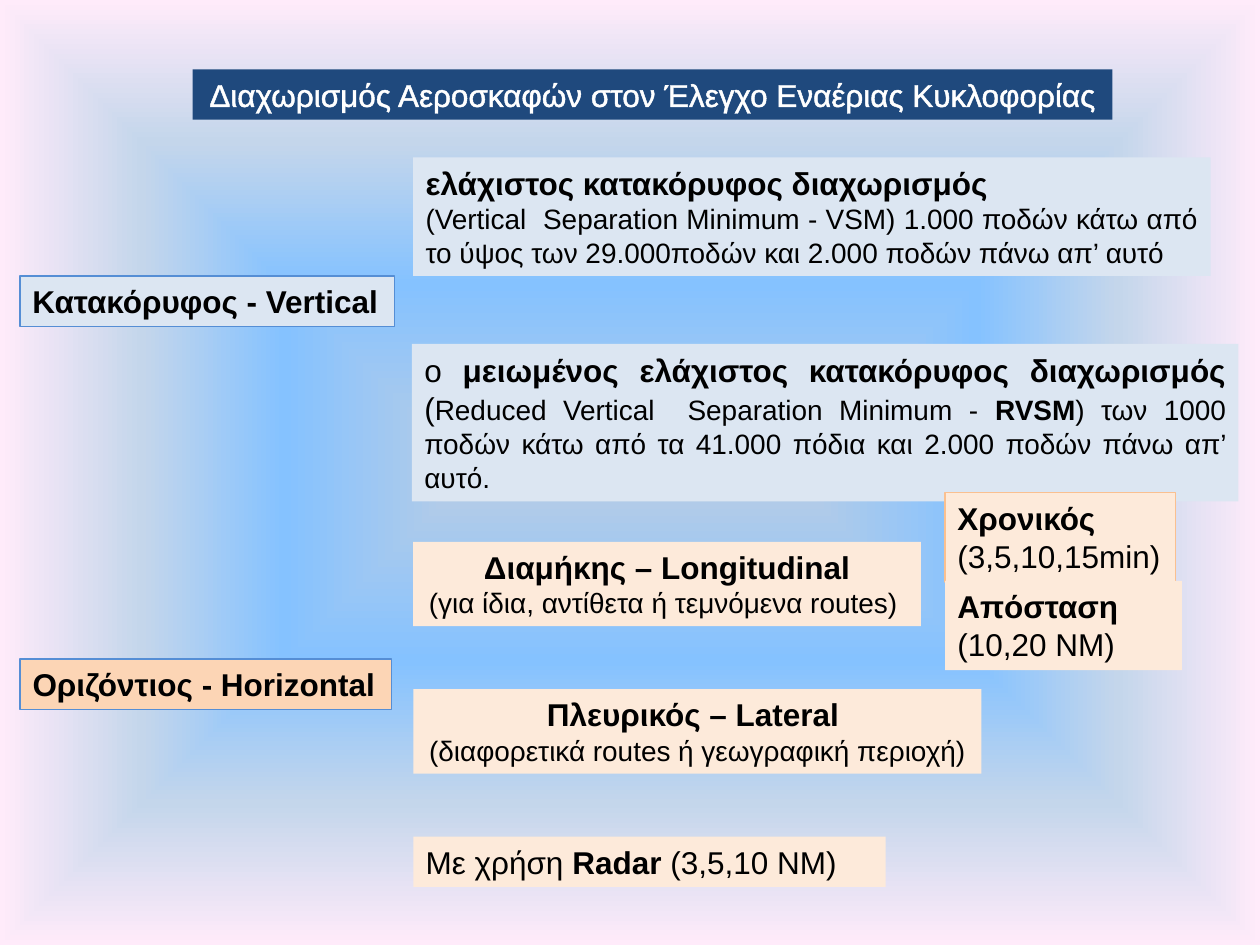
import pptx
import pptx.util
import pptx.dml.color
import pptx.enum.shapes
import pptx.enum.text
import pptx.oxml
import pptx.oxml.ns

Pt = pptx.util.Pt
RGB = pptx.dml.color.RGBColor.from_string
ALIGN = pptx.enum.text.PP_ALIGN
ANCHOR = pptx.enum.text.MSO_ANCHOR
A_NS = pptx.oxml.ns.nsdecls("a")

COLORS = {
    "title": "1F497D", "white": "FFFFFF", "black": "000000",
    "vertical": "DCE6F2", "horizontal": "FCD5B5", "method": "FDEADA",
    "blue line": "558ED5", "orange line": "FAC090",
}
BACKGROUND_STOPS = [(0, "B9CDE5"), (40, "85C2FF"), (70, "C4D6EB"), (100, "FFEBFA")]
BIG, SMALL = 18, 16
METHOD_LEFT = 236.16
TIME_LEFT = 540

presentation = pptx.Presentation()
presentation.slide_width, presentation.slide_height = Pt(720), Pt(540)
slide = presentation.slides.add_slide(presentation.slide_layouts[6])


def add_box(box, fill, paragraphs, align=ALIGN.LEFT, line=None, wrap=True,
            anchor=ANCHOR.TOP, color="black"):
    """Add a filled box; each paragraph is a list of (text, size, bold) runs."""
    shape = slide.shapes.add_shape(
        pptx.enum.shapes.MSO_SHAPE.RECTANGLE, *[Pt(length) for length in box])
    shape.shadow.inherit = False
    shape.fill.solid()
    shape.fill.fore_color.rgb = RGB(COLORS[fill])
    if line:
        shape.line.color.rgb = RGB(COLORS[line])
        shape.line.width = Pt(0.75)
    else:
        shape.line.fill.background()

    frame = shape.text_frame
    frame.word_wrap = wrap
    frame.auto_size = pptx.enum.text.MSO_AUTO_SIZE.SHAPE_TO_FIT_TEXT
    frame.vertical_anchor = anchor
    for index, runs in enumerate(paragraphs):
        paragraph = frame.add_paragraph() if index else frame.paragraphs[0]
        paragraph.alignment = align
        _, base_size, base_bold = runs[0]
        font = paragraph.font
        font.name, font.size, font.bold = "Arial", Pt(base_size), base_bold
        font.color.rgb = RGB(COLORS[color])
        for text, size, bold in runs:
            run = paragraph.add_run()
            run.text = text
            if size != base_size:
                run.font.size = Pt(size)
            if bold != base_bold:
                run.font.bold = bold
    return shape


# Background: gradient from the centre to the edges
slide.background.fill.gradient()
gradient = slide.element.find(".//" + pptx.oxml.ns.qn("a:gradFill"))
for child in list(gradient):
    gradient.remove(child)
stops = "".join(f'<a:gs pos="{position * 1000}"><a:srgbClr val="{color}"/></a:gs>'
                for position, color in BACKGROUND_STOPS)
for xml in (
    f"<a:gsLst {A_NS}>{stops}</a:gsLst>",
    f'<a:path {A_NS} path="shape">'
    '<a:fillToRect l="50000" t="50000" r="50000" b="50000"/></a:path>',
):
    gradient.append(pptx.oxml.parse_xml(xml))

# Title with outlined letters
title = add_box(
    (110.16, 39.6, 525.6, 28.8), "title",
    [[("Διαχωρισμός Αεροσκαφών στον Έλεγχο Εναέριας Κυκλοφορίας", BIG, False)]],
    align=ALIGN.CENTER, color="white")
title_run = title.text_frame.paragraphs[0].runs[0]
title_run.font.color.rgb = RGB(COLORS["white"])
title_run.font.fill.solid()
title_run.font.color.rgb = RGB(COLORS["white"])
title_run.font._element.insert(0, pptx.oxml.parse_xml(
    f'<a:ln {A_NS} w="{Pt(1.45)}"><a:solidFill>'
    f'<a:srgbClr val="{COLORS["white"]}"/></a:solidFill></a:ln>'))

# The two kinds of separation
for top, width, fill, text in [
    (157.68, 213.84, "vertical", "Κατακόρυφος - Vertical"),
    (376.56, 212.4, "horizontal", "Οριζόντιος - Horizontal"),
]:
    add_box((11.52, top, width, 28.8), fill, [[(text, BIG, True)]],
            line="blue line", wrap=False)

# Vertical minima
add_box((METHOD_LEFT, 90, 455.76, 67.68), "vertical", [
    [("ελάχιστος κατακόρυφος διαχωρισμός ", BIG, True)],
    [("(Vertical  Separation Minimum - VSM) 1.000 ποδών κάτω από το ύψος των "
      "29.000ποδών και 2.000 ποδών πάνω απ’ αυτό", SMALL, False)],
], align=ALIGN.JUSTIFY)
add_box((235.44, 196.56, 472.32, 90), "vertical", [[
    ("ο ", BIG, False),
    ("μειωμένος ελάχιστος κατακόρυφος διαχωρισμός", BIG, True),
    (" (", BIG, False),
    ("Reduced Vertical  Separation Minimum - ", SMALL, False),
    ("RVSM", SMALL, True),
    (") των 1000 ποδών κάτω από τα 41.000 πόδια και 2.000 ποδών πάνω απ’ αυτό.",
     SMALL, False),
]], align=ALIGN.JUSTIFY, anchor=ANCHOR.MIDDLE)

# Horizontal methods
for top, width, heading, detail in [
    (393.84, 324.72, "Πλευρικός – Lateral ",
     "(διαφορετικά routes ή γεωγραφική περιοχή)"),
    (309.6, 290.16, "Διαμήκης – Longitudinal",
     "(για ίδια, αντίθετα ή τεμνόμενα routes) "),
]:
    add_box((METHOD_LEFT, top, width, 48.24), "method",
            [[(heading, BIG, True)], [(detail, SMALL, False)]],
            align=ALIGN.CENTER, wrap=False)

# Longitudinal minima in time and distance
for top, width, heading, detail, line, wrap in [
    (281.52, 131.76, "Χρονικός", "(3,5,10,15min)", "orange line", False),
    (331.92, 135.36, "Απόσταση", "(10,20 ΝΜ)", None, True),
]:
    add_box((TIME_LEFT, top, width, 51.12), "method",
            [[(heading, BIG, True)], [(detail, BIG, False)]], line=line, wrap=wrap)

# Radar separation
add_box((METHOD_LEFT, 478.08, 270, 28.8), "method", [[
    ("Με χρήση ", BIG, False), ("Radar", BIG, True), (" (3,5,10 ΝΜ)", BIG, False),
]])

presentation.save("out.pptx")
